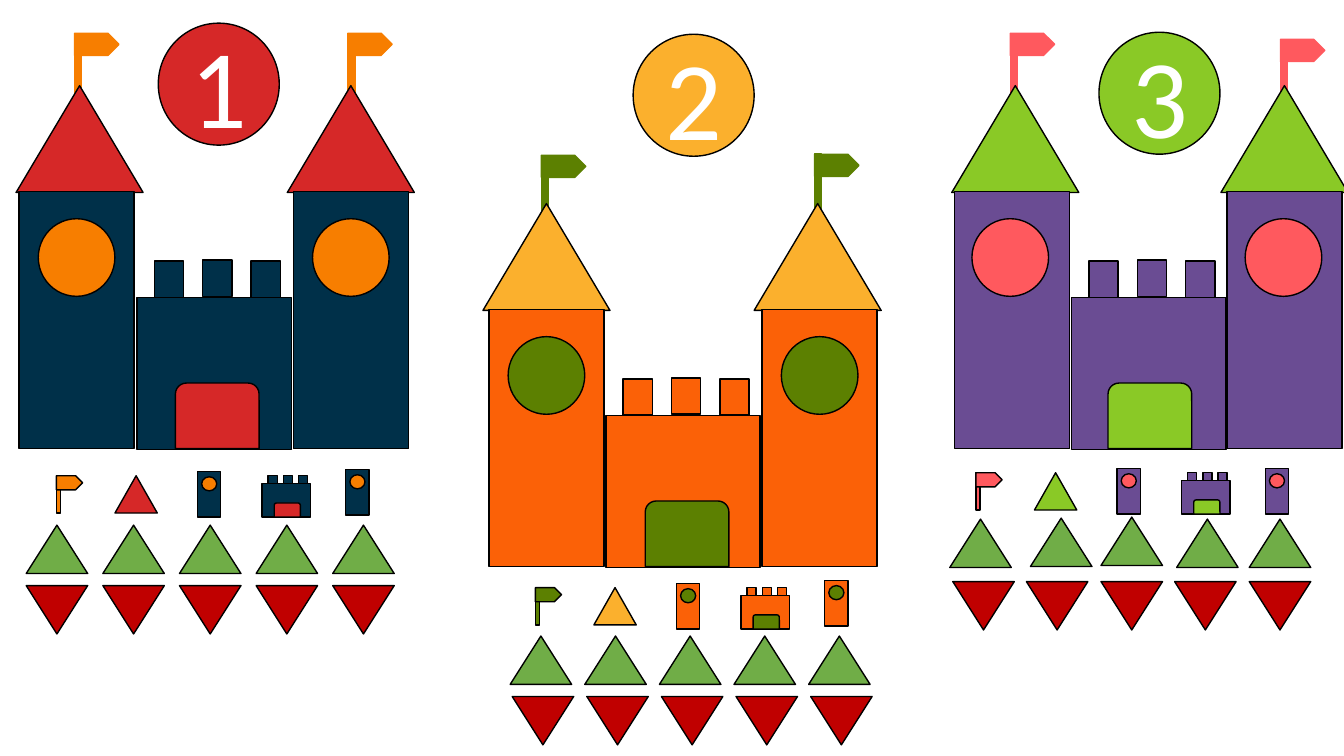
from dataclasses import dataclass
from pptx import Presentation
from pptx.dml.color import RGBColor
from pptx.enum.shapes import MSO_SHAPE as Kind
from pptx.enum.text import MSO_ANCHOR, PP_ALIGN
from pptx.util import Inches, Pt


@dataclass
class Theme:
    font: str = "Calibri"
    number_size: int = 80
    line_width: int = 1
    number: str = "FFFFFF"
    outline: str = "000000"
    up: str = "70AD47"
    down: str = "C00000"


theme = Theme()

FLAG = [(Kind.RECTANGLE, 0, 0, 0.07, 0.6, "flag"),
        (Kind.PENTAGON, 0, 0, 0.44, 0.22, "flag")]
ROOF = [(Kind.ISOSCELES_TRIANGLE, 0, 0, 1.26, 1.06, "roof")]
KEEP = [(Kind.RECTANGLE, 0, 0.36, 1.53, 1.51, "wall"),
        (Kind.RECTANGLE, 0.17, 0, 0.29, 0.36, "wall"),
        (Kind.RECTANGLE, 0.65, -0.01, 0.29, 0.36, "wall"),
        (Kind.RECTANGLE, 1.13, 0, 0.29, 0.36, "wall")]
DOOR = [(Kind.ROUND_2_SAME_RECTANGLE, 0, 0, 0.83, 0.65, "door")]
TOWER = [(Kind.RECTANGLE, 0, 0, 1.14, 2.55, "wall")]
WINDOW = [(Kind.OVAL, 0, 0, 0.76, 0.77, "flag")]

SMALL_FLAG = [(Kind.RECTANGLE, 0, 0, 0.04, 0.37, "flag"),
              (Kind.PENTAGON, 0, 0, 0.26, 0.14, "flag")]
SMALL_ROOF = [(Kind.ISOSCELES_TRIANGLE, 0, 0, 0.42, 0.37, "roof")]
SMALL_TOWER = [(Kind.RECTANGLE, 0, 0, 0.23, 0.45, "wall"),
               (Kind.OVAL, 0.04, 0.05, 0.15, 0.14, "flag")]
SMALL_KEEP = [(Kind.RECTANGLE, 0, 0.08, 0.48, 0.33, "wall"),
              (Kind.RECTANGLE, 0.06, 0, 0.09, 0.08, "wall"),
              (Kind.RECTANGLE, 0.21, 0, 0.09, 0.08, "wall"),
              (Kind.RECTANGLE, 0.36, 0, 0.09, 0.08, "wall"),
              (Kind.ROUND_2_SAME_RECTANGLE, 0.12, 0.27, 0.26, 0.14, "door")]

castles = [
    dict(number="1", badge=(1.57, 0.23), drop=0,
         colors=dict(wall="003049", roof="D62828", door="D62828", flag="F77E00"),
         flags=[(0.74, 0.33), (3.45, 0.33)], roofs=[0.16, 2.85],
         keep=1.36, door=1.74, towers=[(0.19, 0.38), (2.91, 3.1)],
         legend=(0.56, 4.72), last_tower=-0.06,
         ups=[(0.26 + 0.76 * step, 5.21) for step in range(5)],
         downs=[(0.26 + 0.76 * step, 5.81) for step in range(5)]),
    dict(number="2", badge=(6.28, 0.34), drop=1.17,
         colors=dict(wall="FB6107", roof="FBB02D", door="5C8001", flag="5C8001"),
         flags=[(5.37, 1.54), (8.08, 1.53)], roofs=[4.79, 7.48],
         keep=6.01, door=6.4, towers=[(4.85, 5.04), (7.56, 7.75)],
         legend=(5.31, 5.83), last_tower=-0.07,
         ups=[(5.06 + 0.74 * step, 6.31) for step in range(5)],
         downs=[(5.08 + 0.74 * step, 6.91) for step in range(5)]),
    dict(number="3", badge=(10.9, 0.32), drop=0,
         colors=dict(wall="6A4C93", roof="8AC926", door="8AC926", flag="FF595E"),
         flags=[(10.02, 0.33), (12.7, 0.39)], roofs=[9.44, 12.11],
         keep=10.63, door=10.99, towers=[(9.47, 9.64), (12.17, 12.35)],
         legend=(9.68, 4.69), last_tower=-0.04,
         ups=[(9.42, 5.15), (10.22, 5.14), (10.92, 5.13), (11.67, 5.15), (12.39, 5.15)],
         downs=[(left, 5.77) for left in (9.45, 10.18, 10.92, 11.65, 12.39)]),
]


def draw(shapes, kind, left, top, width, height, fill, line=theme.outline):
    shape = shapes.add_shape(kind, Inches(left), Inches(top), Inches(width), Inches(height))
    shape.shadow.inherit = False
    shape.fill.solid()
    shape.fill.fore_color.rgb = RGBColor.from_string(fill)
    shape.line.color.rgb = RGBColor.from_string(line)
    shape.line.width = Pt(theme.line_width)
    return shape


def assemble(shapes, parts, left, top, colors, line=theme.outline):
    for kind, across, down, width, height, role in parts:
        draw(shapes, kind, left + across, top + down, width, height, colors[role], line)


deck = Presentation()
deck.slide_width, deck.slide_height = Inches(13.33), Inches(7.5)
page = deck.slides.add_slide(deck.slide_layouts[6])

for castle in castles:
    colors, drop = castle["colors"], castle["drop"]

    flags = page.shapes.add_group_shape().shapes
    for left, top in castle["flags"]:
        assemble(flags, FLAG, left, top, colors, colors["flag"])

    roofs = page.shapes.add_group_shape().shapes
    for left in castle["roofs"]:
        assemble(roofs, ROOF, left, 0.85 + drop, colors)

    keep = page.shapes.add_group_shape().shapes
    assemble(keep, KEEP, castle["keep"], 2.59 + drop, colors)
    assemble(keep, DOOR, castle["door"], 3.8 + drop, colors)

    for left, window_left in castle["towers"]:
        tower = page.shapes.add_group_shape().shapes
        assemble(tower, TOWER, left, 1.9 + drop, colors)
        assemble(tower, WINDOW, window_left, 2.17 + drop, colors)

    for left, top in castle["ups"]:
        draw(page.shapes, Kind.FLOWCHART_EXTRACT, left, top, 0.61, 0.48, theme.up)
    for left, top in castle["downs"]:
        arrow = draw(page.shapes, Kind.FLOWCHART_EXTRACT, left, top, 0.61, 0.48, theme.down)
        arrow.element.spPr.xfrm.set("flipV", "1")

    legend = page.shapes.add_group_shape().shapes
    left, top = castle["legend"]
    for parts, across, down in [(SMALL_FLAG, 0, 0), (SMALL_ROOF, 0.58, 0),
                                (SMALL_TOWER, 1.4, -0.04), (SMALL_KEEP, 2.04, 0),
                                (SMALL_TOWER, 2.87, castle["last_tower"])]:
        assemble(legend, parts, left + across, top + down, colors)

    badge = draw(page.shapes, Kind.OVAL, *castle["badge"], 1.2, 1.21, colors["roof"])
    badge.text_frame.text = castle["number"]
    badge.text_frame.vertical_anchor = MSO_ANCHOR.MIDDLE
    para = badge.text_frame.paragraphs[0]
    para.alignment = PP_ALIGN.CENTER
    span = para.runs[0]
    span.font.name = theme.font
    span.font.size = Pt(theme.number_size)
    span.font.color.rgb = RGBColor.from_string(theme.number)

deck.save("out.pptx")
